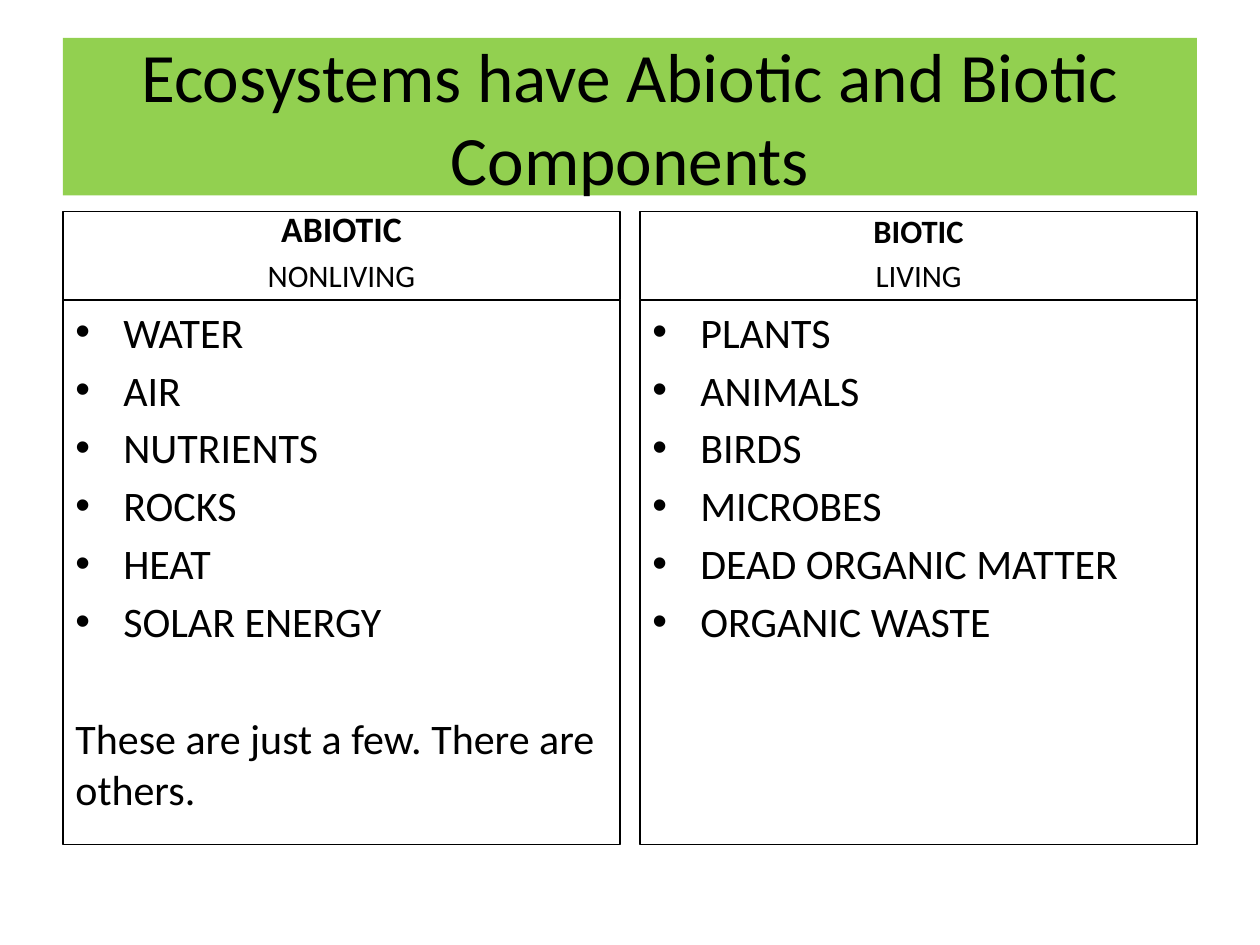
import pptx
import pptx.util
import pptx.dml.color
import pptx.enum.shapes
import pptx.enum.text
import lxml.etree
from pptx.util import Inches

FONT = "Calibri"
BLACK = "000000"
GREEN = "92D050"
ALIGN = pptx.enum.text.PP_ALIGN
ANCHOR = pptx.enum.text.MSO_ANCHOR

MARGIN, COLUMN_WIDTH, COLUMN_GAP = 0.5, 4.42, 0.16
HEADER_TOP, HEADER_HEIGHT, LIST_HEIGHT = 1.68, 0.7, 4.32
HANGING_INDENT = 0.38

# Heading, its size, subheading, its size, list items, closing remark
COLUMNS = [
    ("ABIOTIC", 20.4, "NONLIVING", 17.9,
     ["WATER", "AIR", "NUTRIENTS", "ROCKS", "HEAT", "SOLAR ENERGY"],
     "These are just a few. There are others."),
    ("BIOTIC", 18.6, "LIVING", 17.8,
     ["PLANTS", "ANIMALS", "BIRDS", "MICROBES", "DEAD ORGANIC MATTER",
      "ORGANIC WASTE"],
     None),
]


def color(value):
    return pptx.dml.color.RGBColor.from_string(value)


def add_box(page, left, top, width, height, fill=None, line=None,
            anchor=ANCHOR.TOP):
    box = page.shapes.add_shape(
        pptx.enum.shapes.MSO_SHAPE.RECTANGLE,
        Inches(left), Inches(top), Inches(width), Inches(height))
    box.shadow.inherit = False
    if fill:
        box.fill.solid()
        box.fill.fore_color.rgb = color(fill)
    else:
        box.fill.background()
    if line:
        box.line.color.rgb = color(line)
        box.line.width = pptx.util.Pt(0.75)
    else:
        box.line.fill.background()
    box.text_frame.word_wrap = True
    box.text_frame.vertical_anchor = anchor
    return box


def add_text(box, text, size, bold=False, align=ALIGN.LEFT, before=0,
             bullet=False):
    """Write one paragraph, using the box's first one while it is empty."""
    frame = box.text_frame
    para = frame.paragraphs[0]
    if para.runs:
        para = frame.add_paragraph()
    para.alignment = align
    para.space_before = pptx.util.Pt(before)
    if bullet:
        add_bullet(para)
    span = para.add_run()
    span.text = text
    span.font.name = FONT
    span.font.size = pptx.util.Pt(size)
    span.font.bold = bold
    span.font.color.rgb = color(BLACK)


def add_bullet(para):
    properties = para._p.get_or_add_pPr()
    indent = Inches(HANGING_INDENT)
    properties.set("marL", str(indent))
    properties.set("indent", str(-indent))
    for tag, name, value in (("a:buFont", "typeface", "Arial"),
                             ("a:buChar", "char", "•")):
        mark = lxml.etree.SubElement(properties, pptx.oxml.ns.qn(tag))
        mark.set(name, value)


def add_column(page, left, heading, heading_size, subheading, subheading_size,
               items, remark):
    header = add_box(page, left, HEADER_TOP, COLUMN_WIDTH, HEADER_HEIGHT,
                     line=BLACK, anchor=ANCHOR.BOTTOM)
    add_text(header, heading, heading_size, bold=True, align=ALIGN.CENTER,
             before=3.6)
    add_text(header, subheading, subheading_size, align=ALIGN.CENTER,
             before=3.4)
    body = add_box(page, left, HEADER_TOP + HEADER_HEIGHT, COLUMN_WIDTH,
                   LIST_HEIGHT, line=BLACK)
    for item in items:
        add_text(body, item, 24, before=4.3, bullet=True)
    if remark:
        add_text(body, remark, 24, before=38)


def main():
    deck = pptx.Presentation()
    deck.slide_width, deck.slide_height = Inches(10), Inches(7.5)
    page = deck.slides.add_slide(deck.slide_layouts[6])

    title = add_box(page, MARGIN, 0.3, 9, 1.25, fill=GREEN,
                    anchor=ANCHOR.MIDDLE)
    add_text(title, "Ecosystems have Abiotic and Biotic Components", 39.6,
             align=ALIGN.CENTER)

    for index, column in enumerate(COLUMNS):
        left = MARGIN + index * (COLUMN_WIDTH + COLUMN_GAP)
        add_column(page, left, *column)

    deck.save("out.pptx")


if __name__ == "__main__":
    main()
